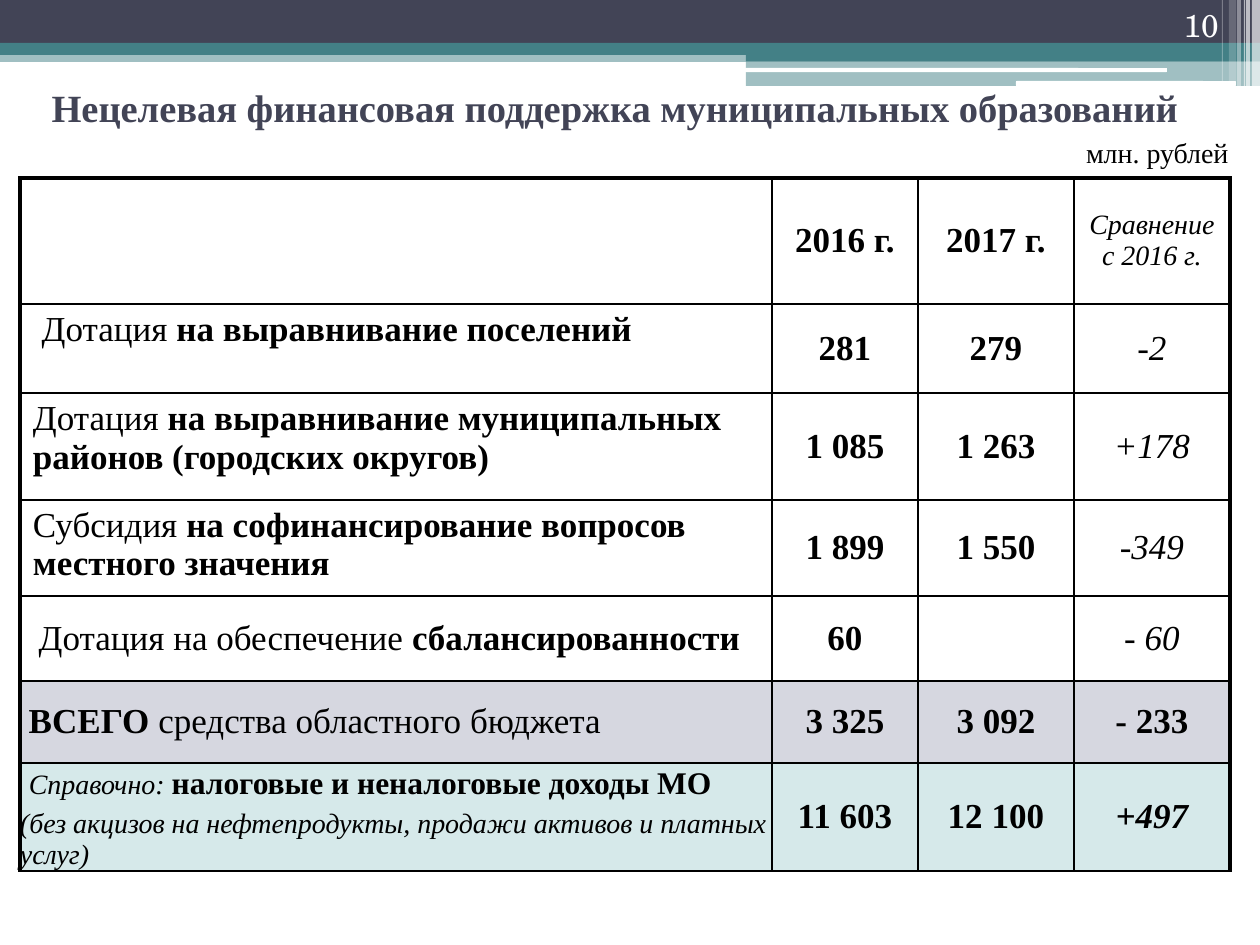
"""Build a slide with a table of untargeted financial support for municipalities."""
from pptx import Presentation
from pptx.dml.color import RGBColor
from pptx.enum.shapes import MSO_SHAPE
from pptx.enum.text import MSO_ANCHOR, PP_ALIGN
from pptx.oxml.ns import qn
from pptx.util import Pt
from lxml.etree import Element, SubElement

PX = 914400 // 126
SERIF, SCHOOL = "Times New Roman", "TeX Gyre Schola"
COLORS = {"navy": "424456", "teal": "438086", "white": "FFFFFF", "black": "000000",
          "total": "D6D7E0", "reference": "D6E9EA"}

BANDS = [
    ((0, 50, 1260, 12), "teal", 50),
    ((0, 0, 1260, 43), "navy", 100),
    ((0, 43, 1260, 12), "teal", 100),
    ((746, 49, 514, 12), "teal", 100),
    ((746, 61, 514, 25), "teal", 50),
]
RULES = [((745, 68, 422, 4), "white", 100), ((1016, 81, 220, 5), "white", 100)]
STRIPES = [
    ((1252, 0, 8, 86), "white", 65),
    ((1246, 0, 4, 86), "white", 65),
    ((1244, 0, 1, 86), "white", 60),
    ((1237, 0, 4, 86), "white", 40),
    ((1229, 0, 7, 81), "white", 20),
    ((1222, 0, 1, 81), "white", 30),
]

TITLE = "Нецелевая финансовая поддержка муниципальных образований"
TABLE_LEFT, TABLE_TOP = 20, 178
COLUMNS = [752, 146, 156, 156]
ROWS = [
    {"height": 126, "label": [], "values": ["2016 г.", "2017 г.", "Сравнение с 2016 г."],
     "last": (16, "i"), "before": 0},
    {"height": 89, "label": [[(" Дотация ", 20, ""), ("на выравнивание поселений", 20, "b")]],
     "values": ["281", "279", "-2"], "anchor": MSO_ANCHOR.TOP},
    {"height": 107, "label": [[("Дотация ", 20, ""),
     ("на выравнивание муниципальных районов (городских округов)", 20, "b")]],
     "values": ["1 085", "1 263", "+178"], "anchor": MSO_ANCHOR.TOP},
    {"height": 96, "label": [[("Субсидия ", 20, ""),
     ("на софинансирование вопросов местного значения", 20, "b")]],
     "values": ["1 899", "1 550", "-349"], "anchor": MSO_ANCHOR.TOP},
    {"height": 85, "label": [[(" Дотация на обеспечение ", 20, ""),
     ("сбалансированности", 20, "b")]],
     "values": ["60", "", "- 60"], "label_inset": 10},
    {"height": 82, "label": [[(" ВСЕГО ", 20, "b"), ("средства областного бюджета", 20, "")]],
     "values": ["3 325", "3 092", "- 233"], "last": (20, "b"), "fill": "total", "inset": (0, 0)},
    {"height": 87, "label": [
        [(" ", 20, "b"), ("Справочно: ", 16, "i"), ("налоговые и неналоговые доходы МО", 18, "b")],
        [("(без акцизов на нефтепродукты, продажи активов и платных услуг)", 16, "i")]],
     "values": ["11 603", "12 100", "+497"], "last": (20, "bi"), "fill": "reference",
     "inset": (0, 0)},
]


def rgb(name):
    return RGBColor.from_string(COLORS[name])


def scaled(lengths):
    return [length * PX for length in lengths]


def assign(target, values):
    for name, value in values.items():
        setattr(target, name, value)


def add_bar(page, kind, area, color, opacity):
    bar = page.shapes.add_shape(kind, *scaled(area))
    bar.shadow.inherit = False
    bar.fill.solid()
    bar.fill.fore_color.rgb = rgb(color)
    bar.line.fill.background()
    if opacity < 100:
        tint = bar.fill._xPr.find(qn("a:solidFill"))[0]
        SubElement(tint, qn("a:alpha"), val=str(opacity * 1000))


def write(frame, paragraphs, align, color="black", font=SERIF, before=0):
    for index, spans in enumerate(paragraphs):
        para = frame.add_paragraph() if index else frame.paragraphs[0]
        assign(para, {"alignment": align, "space_before": Pt(before)})
        for text, size, style in spans:
            span = para.add_run()
            span.text = text
            assign(span.font, {"size": Pt(size), "name": font,
                               "bold": "b" in style, "italic": "i" in style})
            span.font.color.rgb = rgb(color)


def set_borders(cell, widths):
    properties = cell._tc.get_or_add_tcPr()
    for index, (side, width) in enumerate(widths.items()):
        line = Element(qn("a:ln" + side), w=str(Pt(width)))
        SubElement(SubElement(line, qn("a:solidFill")), qn("a:srgbClr"), val=COLORS["black"])
        properties.insert(index, line)


def fill_cell(cell, row, column, paragraphs):
    across, down = row.get("inset", (13, 6))
    left = across if column else row.get("label_inset", across)
    anchor = MSO_ANCHOR.MIDDLE if column else row.get("anchor", MSO_ANCHOR.MIDDLE)
    assign(cell, {"margin_left": left * PX, "margin_right": across * PX,
                  "margin_top": down * PX, "margin_bottom": down * PX,
                  "vertical_anchor": anchor})
    if "fill" in row:
        cell.fill.solid()
        cell.fill.fore_color.rgb = rgb(row["fill"])
    else:
        cell.fill.background()
    plain_total = "fill" in row and column in (1, 2)
    before = 0 if plain_total else row.get("before", 4)
    write(cell.text_frame, paragraphs, PP_ALIGN.CENTER if column else PP_ALIGN.LEFT,
          before=before)


def add_support_table(page):
    heights = [row["height"] for row in ROWS]
    area = (TABLE_LEFT, TABLE_TOP, sum(COLUMNS), sum(heights))
    table = page.shapes.add_table(len(ROWS), len(COLUMNS), *scaled(area)).table
    assign(table, {"first_row": False, "horz_banding": False})
    for column, width in zip(table.columns, scaled(COLUMNS)):
        column.width = width
    for line, height in zip(table.rows, scaled(heights)):
        line.height = height
    final = len(COLUMNS) - 1
    for r, row in enumerate(ROWS):
        styles = [(20, "b"), (20, "b"), row.get("last", (20, "i"))]
        values = [[[(text, *style)]] if text else [] for text, style in zip(row["values"], styles)]
        for c, paragraphs in enumerate([row["label"], *values]):
            cell = table.cell(r, c)
            fill_cell(cell, row, c, paragraphs)
            set_borders(cell, {"L": 1 if c else 2.25, "R": 2.25 if c == final else 1,
                               "T": 1 if r else 2.25, "B": 1})


def add_label(page, area, text, size, anchor, color, font):
    box = page.shapes.add_textbox(*scaled(area))
    assign(box.text_frame, {"word_wrap": True, "vertical_anchor": anchor})
    write(box.text_frame, [[(text, size, "")]], PP_ALIGN.RIGHT, color, font)


def main():
    deck = Presentation()
    assign(deck, {"slide_width": 1260 * PX, "slide_height": 945 * PX})
    page = deck.slides.add_slide(deck.slide_layouts[5])
    for kind, bars in ((MSO_SHAPE.RECTANGLE, BANDS), (MSO_SHAPE.ROUNDED_RECTANGLE, RULES),
                       (MSO_SHAPE.RECTANGLE, STRIPES)):
        for bar in bars:
            add_bar(page, kind, *bar)

    title = page.shapes.title
    assign(title, dict(zip(("left", "top", "width", "height"), scaled((39, 78, 1201, 59)))))
    assign(title.text_frame, {"word_wrap": True, "vertical_anchor": MSO_ANCHOR.MIDDLE})
    write(title.text_frame, [[(TITLE, 22, "b")]], PP_ALIGN.LEFT, "navy")
    page.shapes._spTree.append(title._element)

    add_support_table(page)
    add_label(page, (1126, 0, 105, 50), "10", 18, MSO_ANCHOR.BOTTOM, "white", SCHOOL)
    add_label(page, (1024, 129, 217, 47), "млн. рублей", 16, MSO_ANCHOR.TOP, "black", SERIF)
    deck.save("out.pptx")


if __name__ == "__main__":
    main()
